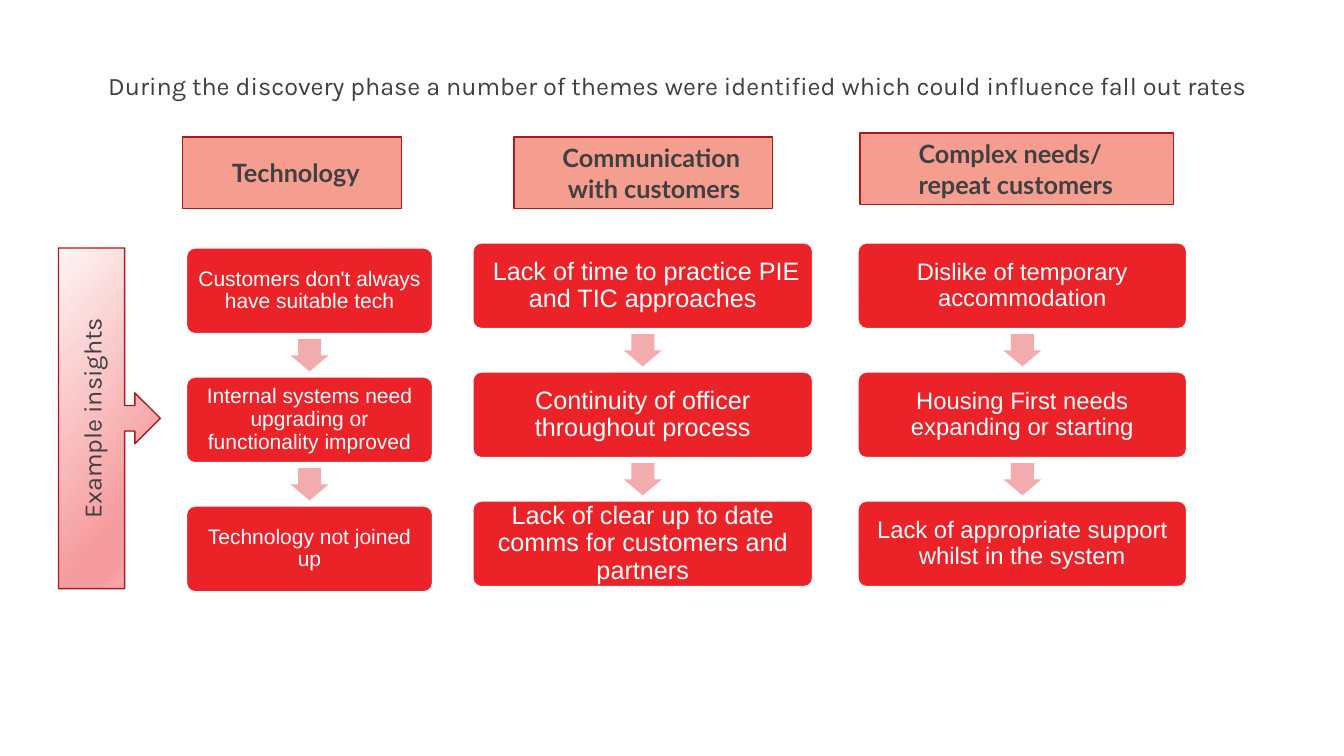
from dataclasses import dataclass

from lxml.etree import SubElement
from pptx import Presentation
from pptx.dml.color import RGBColor
from pptx.enum.shapes import MSO_SHAPE as Shape
from pptx.enum.text import MSO_ANCHOR as Anchor, PP_ALIGN as Align
from pptx.oxml.ns import qn
from pptx.util import Inches, Pt


@dataclass(frozen=True)
class Theme:
    """Colours, fonts and type sizes of the slide."""
    ink: str = "404041"
    white: str = "FFFFFF"
    red: str = "EB2227"
    outline: str = "AE191D"
    heading: str = "F59E8F"
    arrow: str = "F3ACAD"
    fade: tuple = ((0, "FEF4F4"), (74, "F69C9E"), (83, "F69C9E"), (100, "F9BDBE"))
    lead_font: str = "Karla"
    heading_font: str = "Lato"
    box_font: str = "Arial"
    lead_size: int = 18


@dataclass(frozen=True)
class Column:
    """One theme: heading lines and box, heading alignment, insight boxes."""
    heading: tuple
    heading_box: tuple
    align: int
    insets: tuple
    insights: tuple
    insight_box: tuple
    size: int


THEME = Theme()
ROW_PITCH = 1.28
COLUMNS = (
    Column(("Technology",), (1.81, 1.36, 2.17, 0.71), Align.LEFT, (0.49, 0),
           ("Customers don't always have suitable tech",
            "Internal systems need upgrading or functionality improved",
            "Technology not joined up"), (1.85, 2.46, 2.44, 0.85), 15),
    Column(("Communication", " with customers"), (5.1, 1.36, 2.56, 0.71),
           Align.CENTER, (0.16, 0),
           (" Lack of time to practice PIE and TIC approaches",
            "Continuity of officer throughout process",
            "Lack of clear up to date comms for customers and partners"),
           (4.69, 2.41, 3.37, 0.85), 18),
    Column(("Complex needs/", "repeat customers"), (8.53, 1.32, 3.11, 0.71),
           Align.LEFT, (0.58, 0),
           ("Dislike of temporary accommodation",
            "Housing First needs expanding or starting",
            "Lack of appropriate support whilst in the system"),
           (8.51, 2.41, 3.26, 0.85), 17),
)


def add_box(shapes, kind, box, fill=None, line=None):
    """Add a flat preset shape in the given box."""
    shape = shapes.add_shape(kind, *map(Inches, box))
    shape.shadow.inherit = False
    if fill:
        shape.fill.solid()
        shape.fill.fore_color.rgb = RGBColor.from_string(fill)
    if line:
        shape.line.color.rgb = RGBColor.from_string(line)
        shape.line.width = Pt(1)
    else:
        shape.line.fill.background()
    return shape


def write(frame, lines, font, size, color, align=Align.CENTER, bold=False, spacing=None):
    """Write one paragraph per line into a text frame."""
    frame.word_wrap = True
    for index, line in enumerate(lines):
        para = frame.add_paragraph() if index else frame.paragraphs[0]
        para.alignment = align
        para.line_spacing = spacing
        span = para.add_run()
        span.text = line
        span.font.name, span.font.size, span.font.bold = font, Pt(size), bold
        span.font.color.rgb = RGBColor.from_string(color)


def set_insets(frame, left, right, top, bottom):
    """Set the inner margins of a text frame and centre it vertically."""
    frame.margin_left, frame.margin_right = Inches(left), Inches(right)
    frame.margin_top, frame.margin_bottom = Inches(top), Inches(bottom)
    frame.vertical_anchor = Anchor.MIDDLE


def add_lead(page, box, text):
    """Place the lead sentence in the body placeholder."""
    body = page.placeholders[1]
    body.left, body.top, body.width, body.height = map(Inches, box)
    write(body.text_frame, (text,), THEME.lead_font, THEME.lead_size, THEME.ink, spacing=0.9)
    para = body.text_frame.paragraphs[0]
    para.space_before = Pt(10)
    settings = para._p.get_or_add_pPr()
    settings.set("marL", "0")
    settings.set("indent", "0")
    SubElement(settings, qn("a:buNone"))


def add_heading(page, column):
    """Draw the heading box of a column."""
    shape = add_box(page.shapes, Shape.FLOWCHART_PROCESS, column.heading_box,
                    THEME.heading, THEME.outline)
    set_insets(shape.text_frame, *column.insets, 0, 0)
    write(shape.text_frame, column.heading, THEME.heading_font, THEME.lead_size,
          THEME.ink, column.align, bold=True)


def add_insights(page, column):
    """Draw a column of insight boxes with arrows in the gaps."""
    left, top, width, height = column.insight_box
    arrow_length, arrow_width = 0.32, 0.38
    group = page.shapes.add_group_shape()
    for row, insight in enumerate(column.insights):
        row_top = top + row * ROW_PITCH
        if row:
            gap_middle = row_top - (ROW_PITCH - height) / 2
            arrow = add_box(group.shapes, Shape.RIGHT_ARROW,
                            (left + (width - arrow_length) / 2, gap_middle - arrow_width / 2,
                             arrow_length, arrow_width), THEME.arrow)
            arrow.rotation = 90
            arrow.adjustments[0] = 0.6
        shape = add_box(group.shapes, Shape.ROUNDED_RECTANGLE,
                        (left, row_top, width, height), THEME.red, THEME.white)
        shape.adjustments[0] = 0.1
        set_insets(shape.text_frame, 0.07, 0.07, 0, 0)
        write(shape.text_frame, (insight,), THEME.box_font, column.size, THEME.white,
              spacing=0.9)


def add_callout(page, box, text):
    """Draw the fading arrow callout with its upward label."""
    shape = add_box(page.shapes, Shape.RIGHT_ARROW_CALLOUT, box, line=THEME.outline)
    shape.fill.gradient()
    shape.fill.gradient_angle = 320
    stops = shape._element.spPr.find(".//" + qn("a:gsLst"))
    stops.clear()
    for percent, color in THEME.fade:
        stop = SubElement(stops, qn("a:gs"), pos=str(percent * 1000))
        SubElement(stop, qn("a:srgbClr"), val=color)
    frame = shape.text_frame
    frame.vertical_anchor = Anchor.MIDDLE
    write(frame, (text,), THEME.lead_font, THEME.lead_size, THEME.ink)
    frame._txBody.bodyPr.set("vert", "vert270")


def main():
    """Build the themes slide and save it."""
    deck = Presentation()
    deck.slide_width, deck.slide_height = Inches(13.33), Inches(7.5)
    page = deck.slides.add_slide(deck.slide_layouts[1])
    title = page.shapes.title._element
    title.getparent().remove(title)
    add_lead(page, (0.5, 0.68, 12.44, 5.75),
             "During the discovery phase a number of themes were identified "
             "which could influence fall out rates")
    for column in COLUMNS:
        add_heading(page, column)
        add_insights(page, column)
    add_callout(page, (0.58, 2.46, 1.01, 3.38), "Example insights")
    deck.save("out.pptx")


if __name__ == "__main__":
    main()
